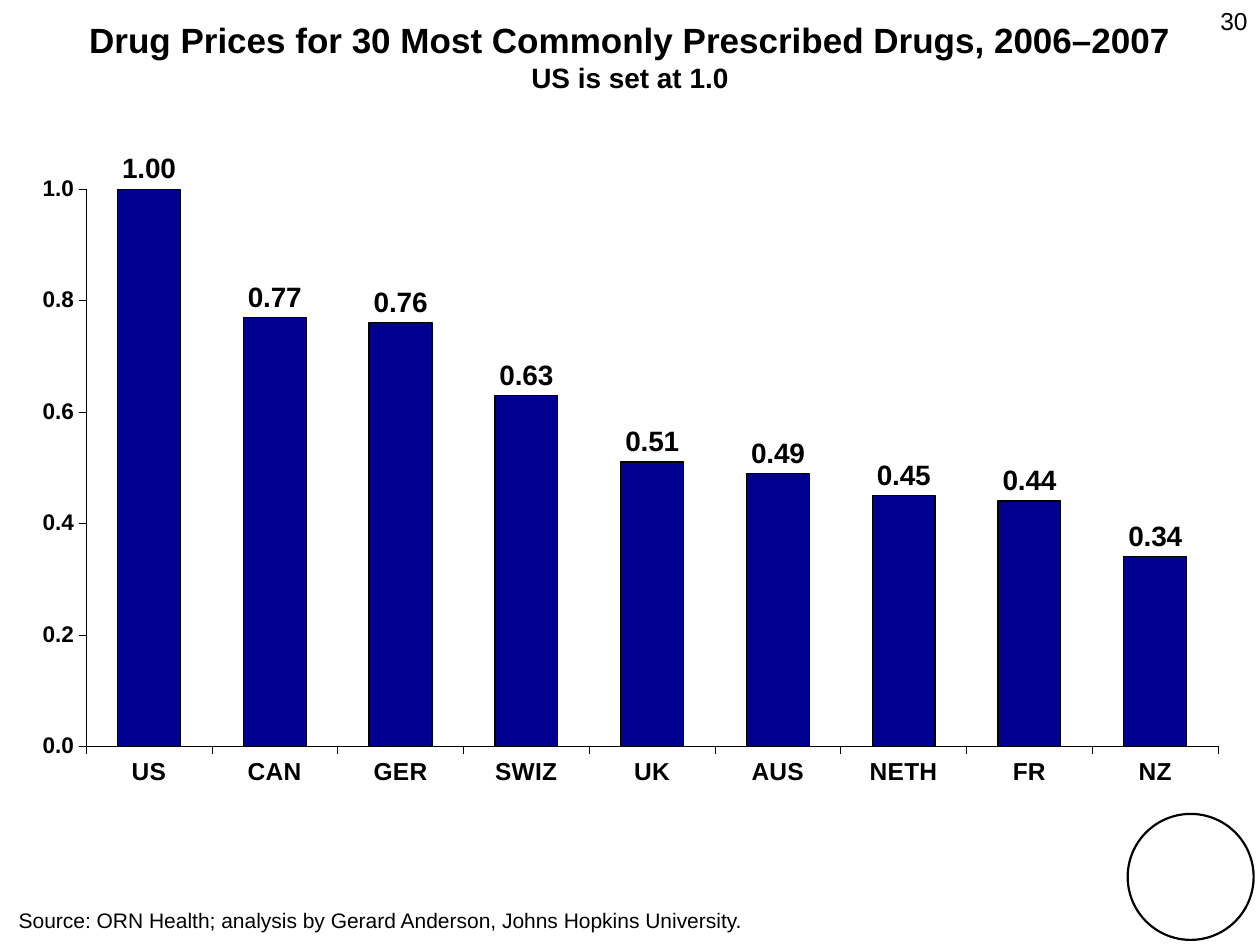
from dataclasses import dataclass

from lxml import etree
from pptx import Presentation
from pptx.chart.data import CategoryChartData
from pptx.dml.color import RGBColor
from pptx.enum.chart import XL_CHART_TYPE, XL_LABEL_POSITION, XL_TICK_MARK
from pptx.enum.shapes import MSO_SHAPE
from pptx.enum.text import PP_ALIGN
from pptx.oxml.ns import qn
from pptx.util import Pt

COLUMNS = XL_CHART_TYPE.COLUMN_CLUSTERED
OUTSIDE_END = XL_LABEL_POSITION.OUTSIDE_END
TICK_OUT, TICK_NONE = XL_TICK_MARK.OUTSIDE, XL_TICK_MARK.NONE
ELLIPSE = MSO_SHAPE.OVAL
LEFT, CENTER, RIGHT = PP_ALIGN.LEFT, PP_ALIGN.CENTER, PP_ALIGN.RIGHT

PRICES = {"US": 1, "CAN": 0.77, "GER": 0.76, "SWIZ": 0.63, "UK": 0.51,
          "AUS": 0.49, "NETH": 0.45, "FR": 0.44, "NZ": 0.34}
PLOT_AREA = {"x": 0.045, "y": 0.1, "w": 0.955, "h": 0.816}


@dataclass(frozen=True)
class Theme:
    font: str = "Arial"
    ink: RGBColor = RGBColor(0, 0, 0)
    bar: RGBColor = RGBColor(0, 0, 0x90)
    title: float = 20
    subtitle: float = 16
    label: float = 16
    category: float = 14
    value: float = 12.9
    number: float = 14
    source: float = 12
    axis_line: float = 0.29
    bar_line: float = 0.75
    circle_line: float = 1.25


class SlideBuilder:
    def __init__(self, slide, theme):
        self.s = slide
        self.theme = theme

    def style_font(self, font, size, bold=False):
        font.name = self.theme.font
        font.size = Pt(size)
        font.bold = bold
        font.color.rgb = self.theme.ink

    def style_line(self, line, width):
        line.color.rgb = self.theme.ink
        line.width = Pt(width)

    def text(self, box, text, sizes, align=LEFT, bold=False):
        """Add one paragraph; sizes holds one type size per line."""
        tf = self.s.shapes.add_textbox(*map(Pt, box)).text_frame
        tf.word_wrap = True
        tf.text = text
        p = tf.paragraphs[0]
        p.alignment = align
        for r, size in zip(p.runs, sizes):
            self.style_font(r.font, size, bold)

    def circle(self, box):
        sp = self.s.shapes.add_shape(ELLIPSE, *map(Pt, box))
        sp.shadow.inherit = False
        sp.fill.background()
        self.style_line(sp.line, self.theme.circle_line)

    def axis(self, axis, size):
        axis.has_major_gridlines = False
        axis.major_tick_mark = TICK_OUT
        axis.minor_tick_mark = TICK_NONE
        self.style_font(axis.tick_labels.font, size, bold=True)
        self.style_line(axis.format.line, self.theme.axis_line)

    def plot_layout(self, chart, area):
        """Fix the inner plot area as fractions of the chart frame."""
        plot_area = chart.plots[0]._element.getparent()
        for old in plot_area.findall(qn("c:layout")):
            plot_area.remove(old)
        layout = etree.Element(qn("c:layout"))
        plot_area.insert(0, layout)
        manual = etree.SubElement(layout, qn("c:manualLayout"))
        settings = {"layoutTarget": "inner", "xMode": "edge", "yMode": "edge", **area}
        for tag, val in settings.items():
            etree.SubElement(manual, qn(f"c:{tag}"), val=str(val))

    def column_chart(self, box, values, area):
        data = CategoryChartData()
        data.categories = list(values)
        data.add_series("Series 1", list(values.values()))
        chart = self.s.shapes.add_chart(COLUMNS, *map(Pt, box), data).chart
        chart.has_legend = False
        chart.has_title = False
        self.style_font(chart.font, self.theme.value)

        self.axis(chart.category_axis, self.theme.category)
        value_axis = chart.value_axis
        self.axis(value_axis, self.theme.value)
        value_axis.minimum_scale = 0
        value_axis.maximum_scale = 1
        value_axis.major_unit = 0.2
        value_axis.tick_labels.number_format = "0.0"
        value_axis.tick_labels.number_format_is_linked = False

        plot = chart.plots[0]
        plot.gap_width = 100
        plot.vary_by_categories = False
        series = plot.series[0]
        series.format.fill.solid()
        series.format.fill.fore_color.rgb = self.theme.bar
        self.style_line(series.format.line, self.theme.bar_line)
        labels = series.data_labels
        labels.show_value = True
        labels.position = OUTSIDE_END
        labels.number_format = "0.00"
        labels.number_format_is_linked = False
        self.style_font(labels.font, self.theme.label, bold=True)
        self.plot_layout(chart, area)


def main():
    prs = Presentation()
    prs.slide_width, prs.slide_height = Pt(720), Pt(540)
    theme = Theme()
    b = SlideBuilder(prs.slides.add_slide(prs.slide_layouts[6]), theme)

    b.text((0, 7.2, 720, 57.6),
           "Drug Prices for 30 Most Commonly Prescribed Drugs, 2006–2007\v"
           "US is set at 1.0",
           (theme.title, theme.subtitle), CENTER, bold=True)
    b.column_chart((18.7, 69.1, 677.5, 390.2), PRICES, PLOT_AREA)
    b.text((3.6, 514.8, 452, 21.6),
           "Source: ORN Health; analysis by Gerard Anderson, Johns Hopkins University.",
           (theme.source,))
    b.text((552, 0, 168, 37.4), "30", (theme.number,), RIGHT)
    b.circle((644.4, 465.1, 72, 72))

    prs.save("out.pptx")


if __name__ == "__main__":
    main()
